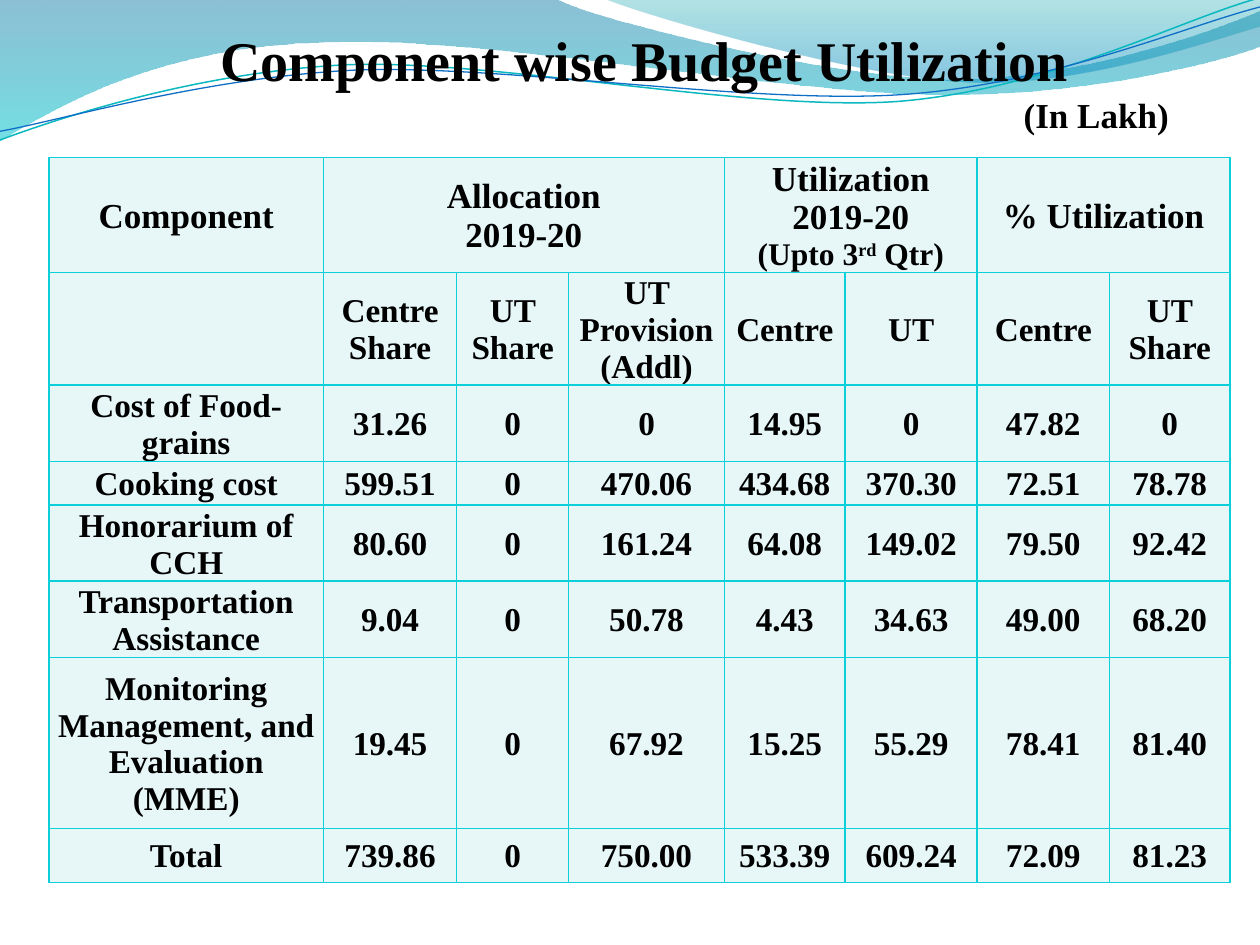
from lxml import etree
from pptx import Presentation
from pptx import util as u
from pptx.dml import color
from pptx.enum import text
from pptx.oxml import ns

FONT = "Times New Roman"
LINE_RATIO = 1.105
COLUMN_WIDTHS = [156.8, 76.2, 64, 89, 69, 75.5, 75.5, 69]
ROW_HEIGHTS = [65.6, 64.4, 43, 25, 43.4, 43.4, 97.7, 31]
HEADINGS = [
    (0, 0, "Component"),
    (1, 3, "Allocation\n2019-20"),
    (4, 5, "Utilization\n2019-20"),
    (6, 7, "% Utilization"),
]
ROWS = [
    ["", "Centre Share", "UT Share", "UT Provision (Addl)", "Centre", "UT", "Centre", "UT Share"],
    ["Cost of Food-grains", "31.26", "0", "0", "14.95", "0", "47.82", "0"],
    ["Cooking cost", "599.51", "0", "470.06", "434.68", "370.30", "72.51", "78.78"],
    ["Honorarium of CCH", "80.60", "0", "161.24", "64.08", "149.02", "79.50", "92.42"],
    ["Transportation Assistance", "9.04", "0", "50.78", "4.43", "34.63", "49.00", "68.20"],
    ["Monitoring Management, and Evaluation (MME)", "19.45", "0", "67.92", "15.25", "55.29", "78.41", "81.40"],
    ["Total", "739.86", "0", "750.00", "533.39", "609.24", "72.09", "81.23"],
]
BROAD_WAVE = [
    (0, 0), (317, -1), (343, 12, 478, 45, 546, 45), (614, 45, 690, 19, 720, 6),
    (721, 26), (708, 32, 626, 55, 537, 54), (448, 54, 275, 20, 185, 24), (93, 26, 33, 60, -1, 81),
]
RIGHT_WAVE = [(345, -1), (366, 8, 491, 45, 554, 47), (616, 50, 692, 23, 720, 15), (720, 0)]
TEAL_LINE = [(0, 80), (35, 67, 114, 41, 199, 37), (284, 34, 427, 64, 513, 58), (600, 51, 675, 11, 719, -1)]
BLUE_LINE = [(0, 75), (34, 69, 118, 44, 204, 40), (290, 37, 430, 60, 516, 54), (602, 48, 677, 15, 720, 4)]


def rgb(value):
    return color.RGBColor.from_string(value)


def add_curve(slide, segments, closed):
    points = [segment[i:i + 2] for segment in segments for i in range(0, len(segment), 2)]
    builder = slide.shapes.build_freeform(*points[0], scale=u.Pt(1))
    builder.add_line_segments(points[1:], close=closed)
    shape = builder.convert_to_shape()
    shape.shadow.inherit = False
    lines = iter(list(shape._element.iter(ns.qn("a:lnTo"))))
    for segment in segments[1:]:
        line = next(lines)
        if len(segment) == 6:
            line.addprevious(curve := etree.Element(ns.qn("a:cubicBezTo")))
            for part in (line, next(lines), next(lines)):
                curve.append(part[0])
                part.getparent().remove(part)
    return shape


def add_wave(slide, segments, stops):
    shape = add_curve(slide, segments, True)
    shape.line.fill.background()
    shape.fill.gradient()
    shape.fill.gradient_angle = 270
    for stop, (position, value, _) in zip(shape.fill.gradient_stops, stops):
        stop.position = position
        stop.color.rgb = rgb(value)
    for element, (_, _, opacity) in zip(shape._element.spPr.iter(ns.qn("a:srgbClr")), stops):
        etree.SubElement(element, ns.qn("a:alpha"), val=str(opacity * 1000))


def add_wave_line(slide, segments, value, width):
    shape = add_curve(slide, segments, False)
    shape.fill.background()
    shape.line.color.rgb = rgb(value)
    shape.line.width = u.Pt(width)


def style_paragraph(paragraph, size, alignment=text.PP_ALIGN.CENTER):
    paragraph.alignment = alignment
    paragraph.font.name = FONT
    paragraph.font.size = u.Pt(size)
    paragraph.font.bold = True
    paragraph.font.color.rgb = rgb("000000")


def add_title(slide):
    shape = slide.shapes.add_textbox(u.Pt(62), u.Pt(2), u.Pt(613), u.Pt(88))
    frame = shape.text_frame
    frame.word_wrap = True
    frame.vertical_anchor = text.MSO_ANCHOR.MIDDLE
    frame.text = "Component wise Budget Utilization\n(In Lakh)"
    title, unit = frame.paragraphs
    style_paragraph(title, 32)
    style_paragraph(unit, 20, text.PP_ALIGN.RIGHT)


def add_borders(cell, value):
    properties = cell._tc.get_or_add_tcPr()
    for index, side in enumerate(("a:lnL", "a:lnR", "a:lnT", "a:lnB")):
        line = etree.Element(ns.qn(side), w=str(u.Pt(1)))
        fill = etree.SubElement(line, ns.qn("a:solidFill"))
        etree.SubElement(fill, ns.qn("a:srgbClr"), val=value)
        properties.insert(index, line)


def style_cell_paragraph(paragraph, size):
    style_paragraph(paragraph, size)
    paragraph.line_spacing = u.Pt(round(size * LINE_RATIO, 1))


def write_cell(cell, content, size):
    cell.text = content
    for paragraph in cell.text_frame.paragraphs:
        style_cell_paragraph(paragraph, size)


def add_quarter_note(cell):
    paragraph = cell.text_frame.add_paragraph()
    style_cell_paragraph(paragraph, 18)
    for content in ("(Upto 3", "rd", " Qtr)"):
        run = paragraph.add_run()
        run.text = content
        if content == "rd":
            run._r.get_or_add_rPr().set("baseline", "30000")


def add_budget_table(slide):
    frame = slide.shapes.add_table(
        len(ROW_HEIGHTS), len(COLUMN_WIDTHS), u.Pt(28), u.Pt(90),
        u.Pt(sum(COLUMN_WIDTHS)), u.Pt(sum(ROW_HEIGHTS)))
    table = frame.table
    table.first_row = table.horz_banding = False
    for column, width in zip(table.columns, COLUMN_WIDTHS):
        column.width = u.Pt(width)
    for row, height in zip(table.rows, ROW_HEIGHTS):
        row.height = u.Pt(height)
    for cell in table.iter_cells():
        cell.margin_left = cell.margin_right = cell.margin_top = u.Pt(1.5)
        cell.margin_bottom = 0
        cell.vertical_anchor = text.MSO_ANCHOR.MIDDLE
        cell.fill.solid()
        cell.fill.fore_color.rgb = rgb("E7F7F8")
        add_borders(cell, "0BD0D9")
    for first, last, content in HEADINGS:
        heading = table.cell(0, first)
        if last > first:
            heading.merge(table.cell(0, last))
        write_cell(heading, content, 20)
    add_quarter_note(table.cell(0, 4))
    for row_index, values in enumerate(ROWS, 1):
        for column_index, value in enumerate(values):
            if value:
                write_cell(table.cell(row_index, column_index), value, 19)


def main():
    presentation = Presentation()
    presentation.slide_width, presentation.slide_height = u.Pt(720), u.Pt(540)
    slide = presentation.slides.add_slide(presentation.slide_layouts[6])
    add_wave(slide, BROAD_WAVE, [(0, "0074A1", 45), (1, "00C6CF", 55)])
    add_wave(slide, RIGHT_WAVE, [(0, "00A1A9", 30), (0.8, "008BBF", 45)])
    add_wave_line(slide, TEAL_LINE, "0AB8BF", 0.85)
    add_wave_line(slide, BLUE_LINE, "0F6FC6", 0.75)
    add_title(slide)
    add_budget_table(slide)
    presentation.save("out.pptx")


if __name__ == "__main__":
    main()
